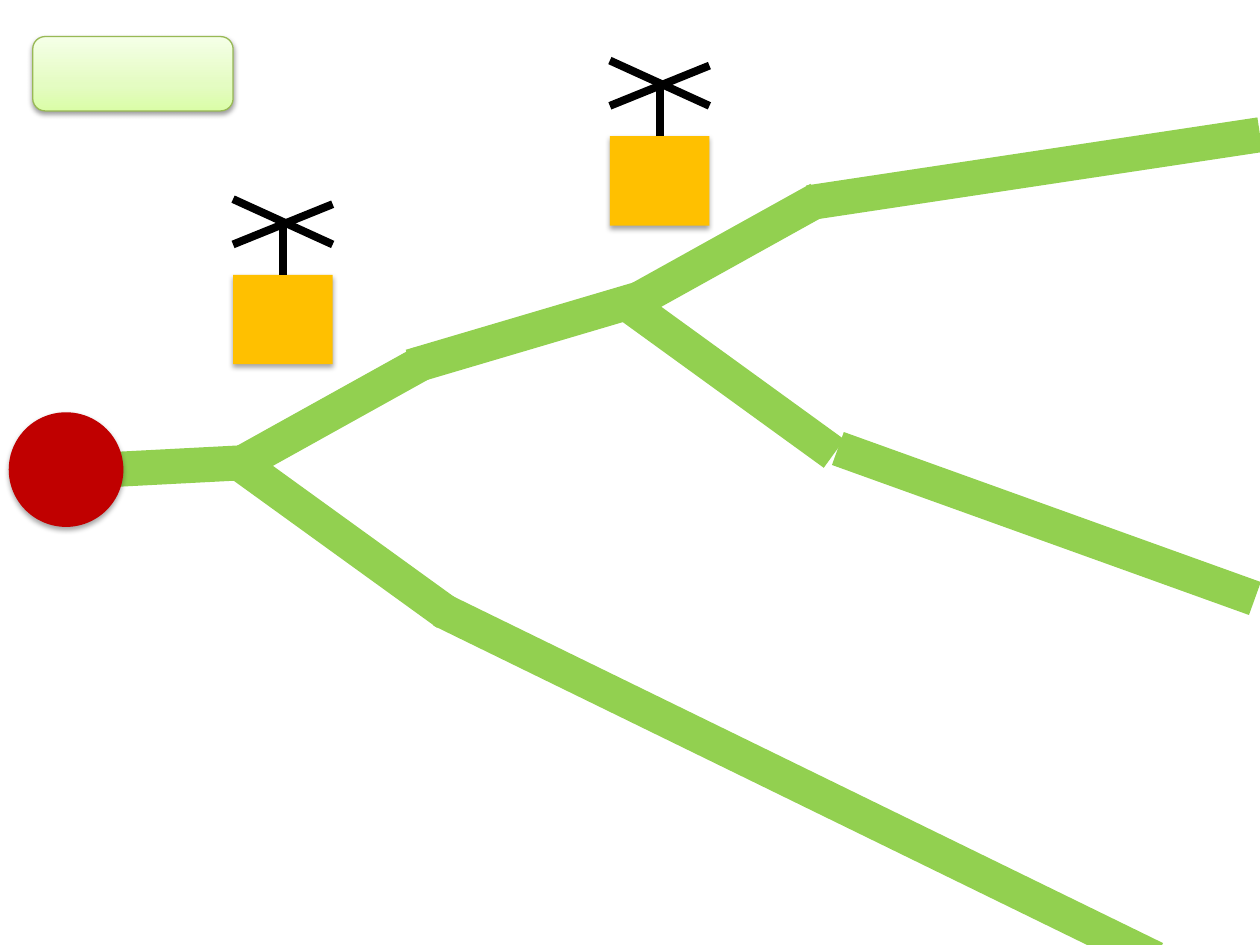
import copy
from dataclasses import dataclass

import pptx
import pptx.dml.color
import pptx.enum.shapes
import pptx.oxml
import pptx.oxml.ns
import pptx.util
from pptx.dml.color import RGBColor
from pptx.enum.shapes import MSO_CONNECTOR, MSO_SHAPE
from pptx.util import Pt

BLACK = RGBColor(0x00, 0x00, 0x00)
GREEN = RGBColor(0x92, 0xD0, 0x50)
AMBER = RGBColor(0xFF, 0xC0, 0x00)
RED = RGBColor(0xC0, 0x00, 0x00)
LABEL_BORDER = RGBColor(0x98, 0xB9, 0x55)
LABEL_STOPS = (
    (0, RGBColor(0xDA, 0xFD, 0xA7)),
    (0.35, RGBColor(0xE4, 0xFC, 0xC2)),
    (1, RGBColor(0xF5, 0xFF, 0xE7)),
)

BRANCH_WIDTH = 20
ANTENNA_WIDTH = 4.5
STATION_WIDTH = 56.9
STATION_HEIGHT = 51.1
STATION_DROP = 43.2
MAST_HEIGHT = 28.6


@dataclass(frozen=True)
class Segment:
    x1: float
    y1: float
    x2: float
    y2: float


@dataclass(frozen=True)
class Station:
    """Position of the top left corner of the antenna."""
    left: float
    top: float


STATIONS = (Station(133.2, 113.8), Station(348.5, 34.6))

BRANCHES = (
    Segment(139, 264.2, 241.2, 207.4),
    Segment(18.7, 270.7, 143.3, 264.2),
    Segment(234.7, 209.5, 368.6, 169.9),
    Segment(252, 348.5, 660.2, 547.9),
    Segment(136.1, 264.2, 255.6, 350.6),
    Segment(365.8, 170.6, 468, 113.8),
    Segment(462.2, 115.9, 720, 77),
    Segment(478.8, 256.3, 717.1, 342),
    Segment(356.4, 172.1, 476.6, 259.2),
)


def add_line(shapes, segment: Segment, color: RGBColor, width: float):
    line = shapes.add_connector(
        MSO_CONNECTOR.STRAIGHT,
        Pt(segment.x1), Pt(segment.y1), Pt(segment.x2), Pt(segment.y2),
    )
    line.line.color.rgb = color
    line.line.width = Pt(width)
    properties = line._element.spPr
    properties.append(properties.makeelement(pptx.oxml.ns.qn("a:effectLst"), {}))
    return line


def add_shadow(shape, blur: float, distance: float, opacity: int) -> None:
    """Cast a black shadow straight down; opacity is in percent."""
    shape.shadow.inherit = False
    effects = shape._element.spPr.find(pptx.oxml.ns.qn("a:effectLst"))
    effects.append(pptx.oxml.parse_xml(
        f'<a:outerShdw {pptx.oxml.ns.nsdecls("a")} blurRad="{Pt(blur)}" '
        f'dist="{Pt(distance)}" dir="5400000" rotWithShape="0">'
        f'<a:srgbClr val="{BLACK}"><a:alpha val="{opacity * 1000}"/></a:srgbClr>'
        '</a:outerShdw>'
    ))


def add_solid(shapes, kind, left: float, top: float, width: float,
              height: float, color: RGBColor):
    shape = shapes.add_shape(kind, Pt(left), Pt(top), Pt(width), Pt(height))
    shape.fill.solid()
    shape.fill.fore_color.rgb = color
    shape.line.fill.background()
    add_shadow(shape, 3.1, 1.8, 35)
    return shape


def add_station(page, station: Station) -> None:
    left, top = station.left, station.top
    right, box_top = left + STATION_WIDTH, top + STATION_DROP
    middle = left + STATION_WIDTH / 2

    group = page.shapes.add_group_shape()
    box = add_solid(group.shapes, MSO_SHAPE.RECTANGLE, left, box_top,
                    STATION_WIDTH, STATION_HEIGHT, AMBER)
    mast = add_line(group.shapes,
                    Segment(middle, box_top, middle, box_top - MAST_HEIGHT),
                    BLACK, ANTENNA_WIDTH)
    mast.begin_connect(box, 0)

    for arm in (Segment(left, top + 25.9, right, top + 2.9),
                Segment(left, top, right, top + 25.9)):
        add_line(page.shapes, arm, BLACK, ANTENNA_WIDTH)


def add_label(page) -> None:
    label = page.shapes.add_shape(MSO_SHAPE.ROUNDED_RECTANGLE,
                                  Pt(18.7), Pt(20.9), Pt(114.5), Pt(42.5))
    label.fill.gradient()
    label.fill.gradient_angle = 90
    stop_list = label._element.spPr.find(".//" + pptx.oxml.ns.qn("a:gsLst"))
    stop_list.append(copy.deepcopy(stop_list[0]))
    for stop, (position, color) in zip(label.fill.gradient_stops, LABEL_STOPS):
        stop.position = position
        stop.color.rgb = color
    label.line.color.rgb = LABEL_BORDER
    label.line.width = Pt(0.75)
    add_shadow(label, 3.1, 1.6, 38)


def main() -> None:
    deck = pptx.Presentation()
    deck.slide_width, deck.slide_height = Pt(720), Pt(540)
    page = deck.slides.add_slide(deck.slide_layouts[6])

    for station in STATIONS:
        add_station(page, station)
    for branch in BRANCHES:
        add_line(page.shapes, branch, GREEN, BRANCH_WIDTH)
    add_label(page)
    add_solid(page.shapes, MSO_SHAPE.OVAL, 5, 235.6, 65.5, 65.5, RED)

    deck.save("out.pptx")


if __name__ == "__main__":
    main()
